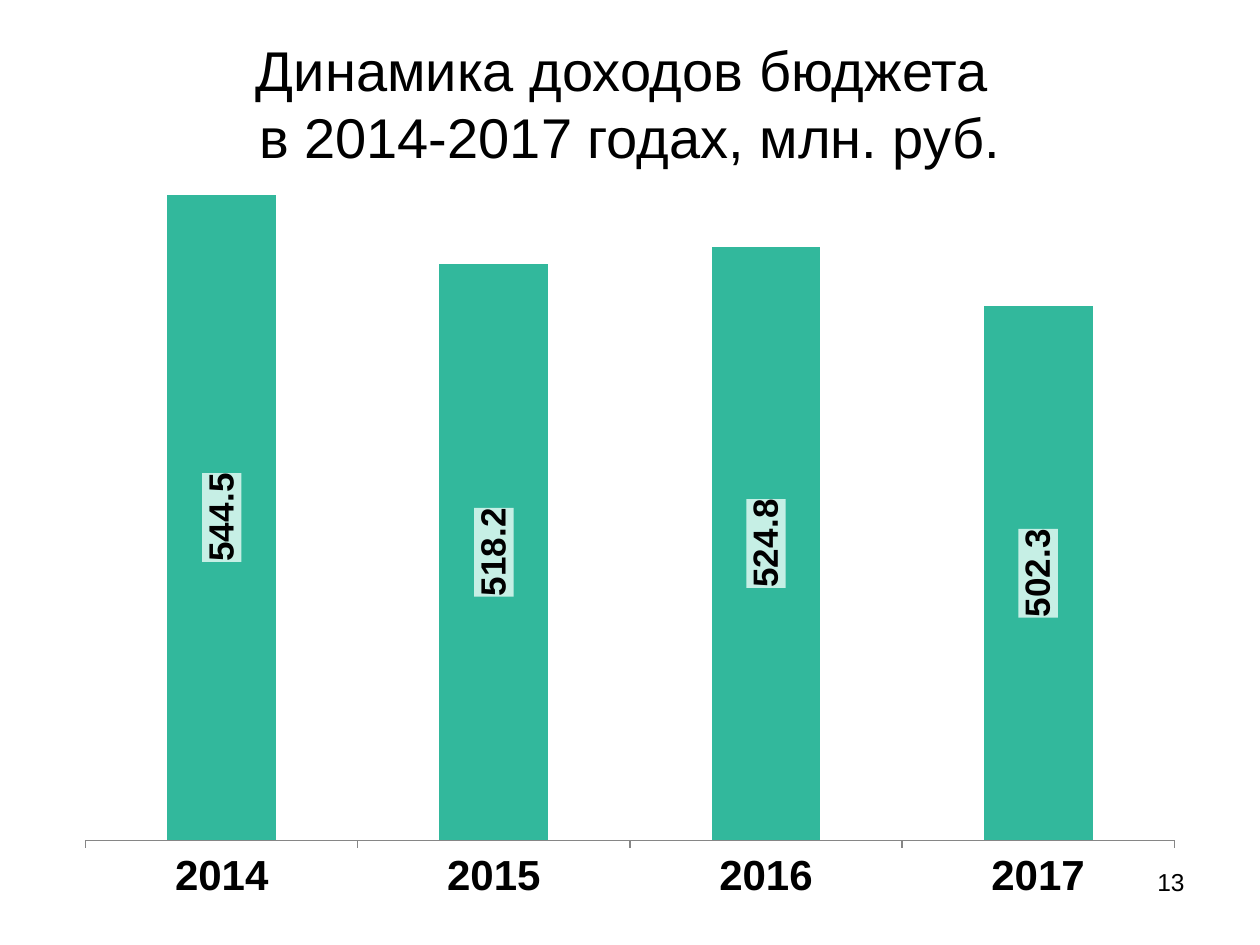
from lxml import etree
from pptx import Presentation
from pptx.chart.data import CategoryChartData
from pptx.dml.color import RGBColor
from pptx.enum.chart import XL_CHART_TYPE, XL_LABEL_POSITION, XL_TICK_MARK
from pptx.enum.text import MSO_ANCHOR, MSO_AUTO_SIZE, PP_ALIGN
from pptx.oxml import parse_xml
from pptx.oxml.ns import nsdecls, qn
from pptx.util import Emu, Pt

STACKED = XL_CHART_TYPE.COLUMN_STACKED
LABEL_CENTER = XL_LABEL_POSITION.CENTER
TICK_OUT = XL_TICK_MARK.OUTSIDE
MIDDLE, TOP = MSO_ANCHOR.MIDDLE, MSO_ANCHOR.TOP
NO_FIT = MSO_AUTO_SIZE.NONE
CENTER, RIGHT = PP_ALIGN.CENTER, PP_ALIGN.RIGHT

PX = 914400 // 126
FONT = "Arial"
COLORS = {"text": "000000", "bar": "32B89C", "label": "C6EFE5", "axis": "868686"}
YEARS = ["2014", "2015", "2016", "2017"]
INCOME = [544.5, 518.2, 524.8, 502.3]


def px(*lengths):
    return [Emu(length * PX) for length in lengths]


def color(name):
    return RGBColor.from_string(COLORS[name])


def style_font(font, size, bold=False):
    font.name = FONT
    font.size = Pt(size)
    font.bold = bold
    font.color.rgb = color("text")


def add_span(para, text, size):
    span = para.add_run()
    span.text = text
    style_font(span.font, size)


def place_title(page, box):
    title = page.shapes.title
    title.left, title.top, title.width, title.height = px(*box)
    frame = title.text_frame
    frame.auto_size = NO_FIT
    frame.vertical_anchor = MIDDLE
    para = frame.paragraphs[0]
    para.alignment = CENTER
    add_span(para, "Динамика доходов бюджета ", 32)
    para.add_line_break()
    add_span(para, "в 2014-2017 годах, млн. руб.", 32)


def set_plot_layout(chart, x, y, w, h):
    area = chart.plots[0]._element.getparent()
    for old in area.findall(qn("c:layout")):
        area.remove(old)
    layout = parse_xml(f"<c:layout {nsdecls('c')}><c:manualLayout/></c:layout>")
    settings = [("layoutTarget", "inner"), ("xMode", "edge"), ("yMode", "edge"),
                ("x", x), ("y", y), ("w", w), ("h", h)]
    for tag, value in settings:
        etree.SubElement(layout[0], qn(f"c:{tag}")).set("val", str(value))
    area.insert(0, layout)


def style_labels(labels):
    labels.show_value = True
    labels.number_format = "0.0"
    labels.number_format_is_linked = False
    labels.position = LABEL_CENTER
    style_font(labels.font, 20, True)
    text = labels._element.find(qn("c:txPr"))
    body = text.find(qn("a:bodyPr"))
    body.set("rot", "-5400000")
    body.set("vert", "horz")
    text.addprevious(parse_xml(
        f"<c:spPr {nsdecls('c', 'a')}><a:solidFill>"
        f"<a:srgbClr val=\"{COLORS['label']}\"/></a:solidFill></c:spPr>"))


def place_chart(page, box):
    data = CategoryChartData(number_format="0.0")
    data.categories = YEARS
    data.add_series("Series 1", INCOME)
    chart = page.shapes.add_chart(STACKED, *px(*box), data).chart
    chart.has_title = False
    chart.has_legend = False
    style_font(chart.font, 18)

    years = chart.category_axis
    years.major_tick_mark = TICK_OUT
    years.has_major_gridlines = False
    years.format.line.color.rgb = color("axis")
    style_font(years.tick_labels.font, 24, True)

    amounts = chart.value_axis
    amounts.minimum_scale, amounts.maximum_scale = 300, 545
    amounts.has_major_gridlines = False
    amounts.visible = False

    plot = chart.plots[0]
    plot.gap_width, plot.overlap = 150, 100
    plot.vary_by_categories = False
    bars = plot.series[0]
    bars.format.fill.solid()
    bars.format.fill.fore_color.rgb = color("bar")
    style_labels(bars.data_labels)
    set_plot_layout(chart, 0.02, 0.02, 0.96, 0.88)


def place_page_number(page, box):
    frame = page.shapes.add_textbox(*px(*box)).text_frame
    frame.word_wrap = True
    frame.vertical_anchor = TOP
    para = frame.paragraphs[0]
    para.alignment = RIGHT
    add_span(para, "13", 14)


def main():
    deck = Presentation()
    deck.slide_width, deck.slide_height = px(1260, 945)
    page = deck.slides.add_slide(deck.slide_layouts[5])
    place_title(page, (63, 38, 1134, 130))
    place_chart(page, (63, 179, 1134, 735))
    place_page_number(page, (903, 861, 294, 66))
    deck.save("out.pptx")


if __name__ == "__main__":
    main()
